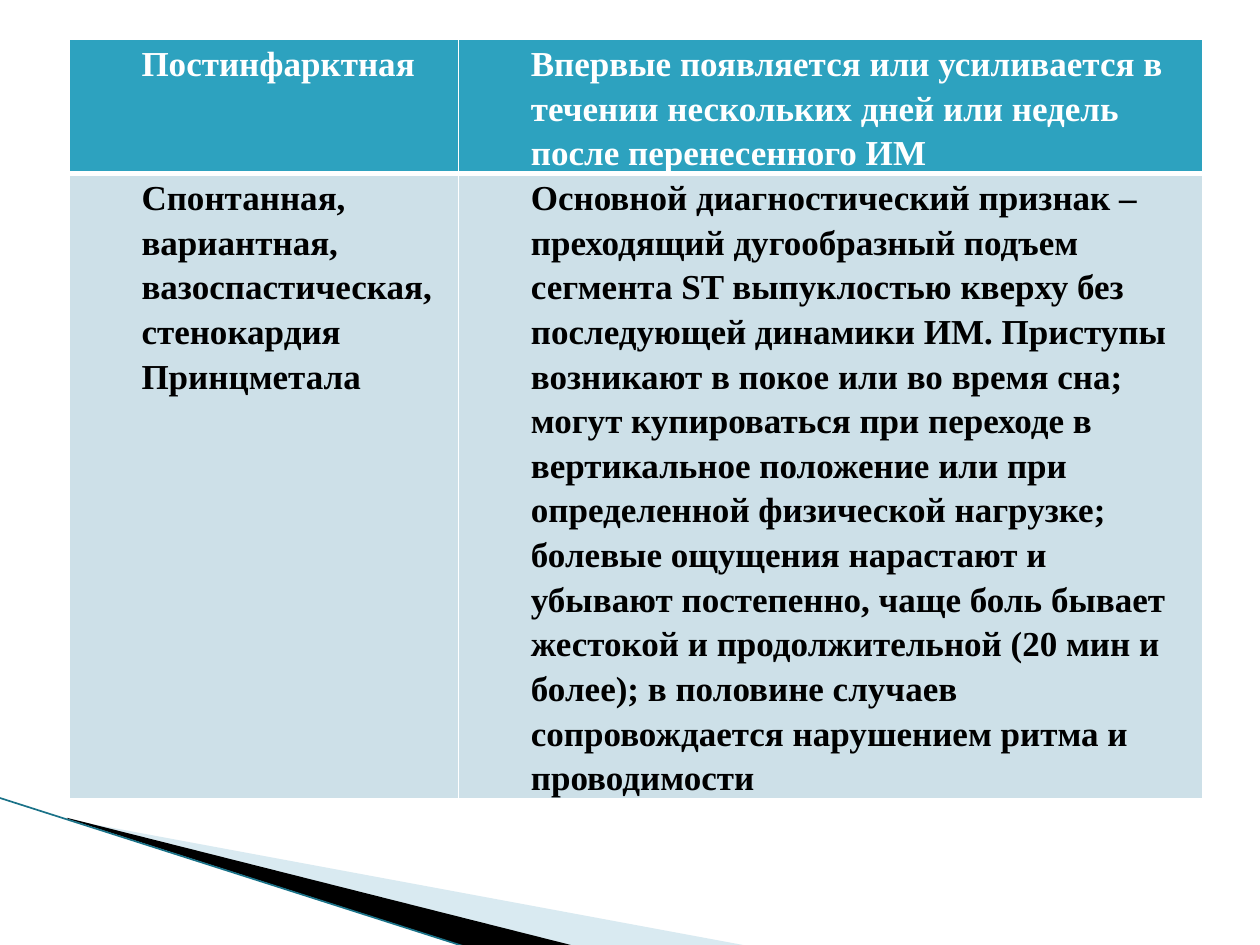
from dataclasses import dataclass

from lxml.etree import SubElement
from pptx import Presentation
from pptx.dml.color import RGBColor
from pptx.enum.shapes import MSO_CONNECTOR
from pptx.oxml.ns import qn
from pptx.util import Pt


@dataclass(frozen=True)
class Theme:
    font: str = "Times New Roman"
    size: float = 20
    header: str = "2DA2BF"
    body: str = "CDE0E8"
    white: str = "FFFFFF"
    black: str = "000000"
    wedge: str = "A0CBDC"
    edge: str = "1A7288"


THEME = Theme()

ROWS = [
    ("Постинфарктная",
     "Впервые появляется или усиливается в течении нескольких дней или недель "
     "после перенесенного ИМ"),
    ("Спонтанная, вариантная, вазоспастическая, стенокардия Принцметала",
     "Основной диагностический признак – преходящий дугообразный подъем "
     "сегмента ST выпуклостью кверху без последующей динамики ИМ. Приступы "
     "возникают в покое или во время сна; могут купироваться при переходе в "
     "вертикальное положение или при определенной физической нагрузке; "
     "болевые ощущения нарастают и убывают постепенно, чаще боль бывает "
     "жестокой и продолжительной (20 мин и более); в половине случаев "
     "сопровождается нарушением ритма и проводимости"),
]
COL_WIDTHS = (222.5, 425.5)
ROW_HEIGHTS = (76, 357)


def write_text(tf, text, *, color, indent=36, line_spacing=1.15, after=0):
    p = tf.paragraphs[0]
    p.line_spacing = line_spacing
    p.space_after = Pt(after)
    pPr = p._p.get_or_add_pPr()
    pPr.set("marL", str(Pt(indent)))
    pPr.set("indent", "0")
    r = p.add_run()
    r.text = text
    r.font.name = THEME.font
    r.font.size = Pt(THEME.size)
    r.font.bold = True
    r.font.color.rgb = RGBColor.from_string(color)


def set_borders(cell, **widths):
    tcPr = cell._tc.get_or_add_tcPr()
    for side in "LRTB":
        ln = SubElement(tcPr, qn(f"a:ln{side}"), w=str(Pt(widths.get(side, 1))))
        fill = SubElement(ln, qn("a:solidFill"))
        SubElement(fill, qn("a:srgbClr"), val=THEME.white)


def set_frame(sp, left, top, width, height):
    dx, dy = sp.left - Pt(left), sp.top - Pt(top)
    for pt in sp._element.iter(qn("a:pt")):
        pt.set("x", str(int(pt.get("x")) + dx))
        pt.set("y", str(int(pt.get("y")) + dy))
    for outline in sp._element.iter(qn("a:path")):
        outline.set("w", str(Pt(width)))
        outline.set("h", str(Pt(height)))
    sp.left, sp.top = Pt(left), Pt(top)
    sp.width, sp.height = Pt(width), Pt(height)


def add_wedge(s, points, frame, color, alpha=None):
    start, *rest = [(Pt(x), Pt(y)) for x, y in points]
    builder = s.shapes.build_freeform(*start)
    builder.add_line_segments(rest, close=True)
    sp = builder.convert_to_shape()
    set_frame(sp, *frame)
    sp.shadow.inherit = False
    sp.line.fill.background()
    sp.fill.solid()
    sp.fill.fore_color.rgb = RGBColor.from_string(color)
    if alpha is not None:
        clr = sp._element.spPr.find(qn("a:solidFill"))[0]
        SubElement(clr, qn("a:alpha"), val=str(alpha * 1000))


def add_edge(s, start, end, color, width):
    ends = [Pt(v) for v in (*start, *end)]
    line = s.shapes.add_connector(MSO_CONNECTOR.STRAIGHT, *ends)
    line.line.color.rgb = RGBColor.from_string(color)
    line.line.width = Pt(width)
    SubElement(line._element.spPr, qn("a:effectLst"))


def add_angina_table(s, left, top):
    frame = s.shapes.add_table(len(ROWS), len(COL_WIDTHS), Pt(left), Pt(top),
                               Pt(sum(COL_WIDTHS)), Pt(sum(ROW_HEIGHTS)))
    table = frame.table
    for col, width in zip(table.columns, COL_WIDTHS):
        col.width = Pt(width)
    for i, (row, height) in enumerate(zip(table.rows, ROW_HEIGHTS)):
        row.height = Pt(height)
        is_header = i == 0
        for j, cell in enumerate(row.cells):
            cell.margin_left = cell.margin_right = Pt(5.4)
            cell.margin_top = cell.margin_bottom = Pt(0)
            set_borders(cell, **({"B": 3} if is_header else {"T": 3}))
            cell.fill.solid()
            cell.fill.fore_color.rgb = RGBColor.from_string(
                THEME.header if is_header else THEME.body)
            write_text(cell.text_frame, ROWS[i][j],
                       color=THEME.white if is_header else THEME.black,
                       after=10 if j else 0)


def main():
    prs = Presentation()
    prs.slide_width, prs.slide_height = Pt(720), Pt(540)
    s = prs.slides.add_slide(prs.slide_layouts[6])
    add_wedge(s, [(39.6, 468.5), (428.4, 540.7), (328.3, 540.7), (39.6, 468)],
              (56.2, 393.8, 299.5, 113.8), THEME.wedge, alpha=40)
    add_wedge(s, [(38.2, 467.3), (329, 540.7), (267.8, 541.4), (38.9, 468)],
              (-4.3, 455.8, 299.5, 66.2), THEME.black)
    add_edge(s, (-0.7, 455.8), (267.1, 541.4), THEME.edge, 0.95)
    add_angina_table(s, 39.5, 22.5)
    prs.save("out.pptx")


if __name__ == "__main__":
    main()
